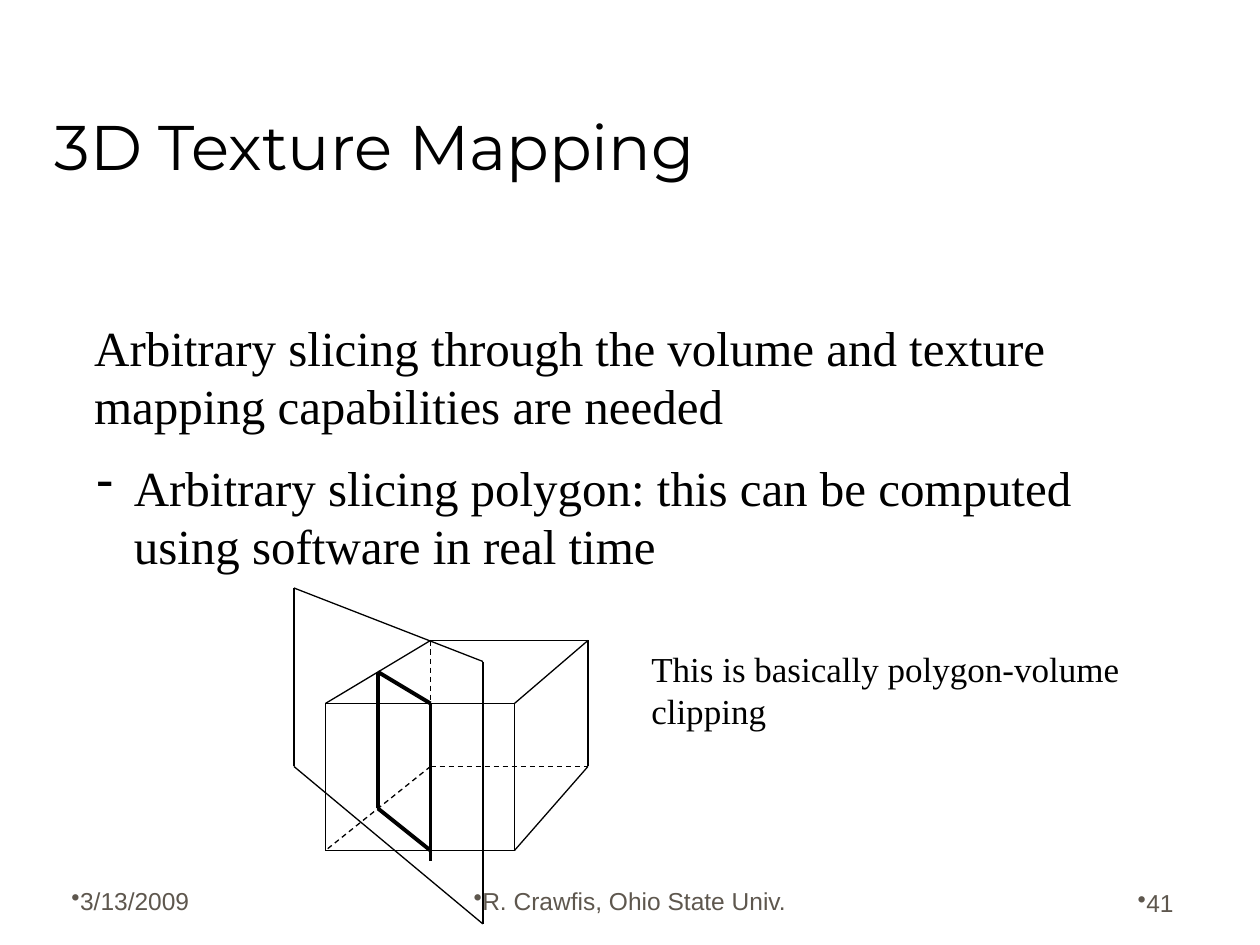
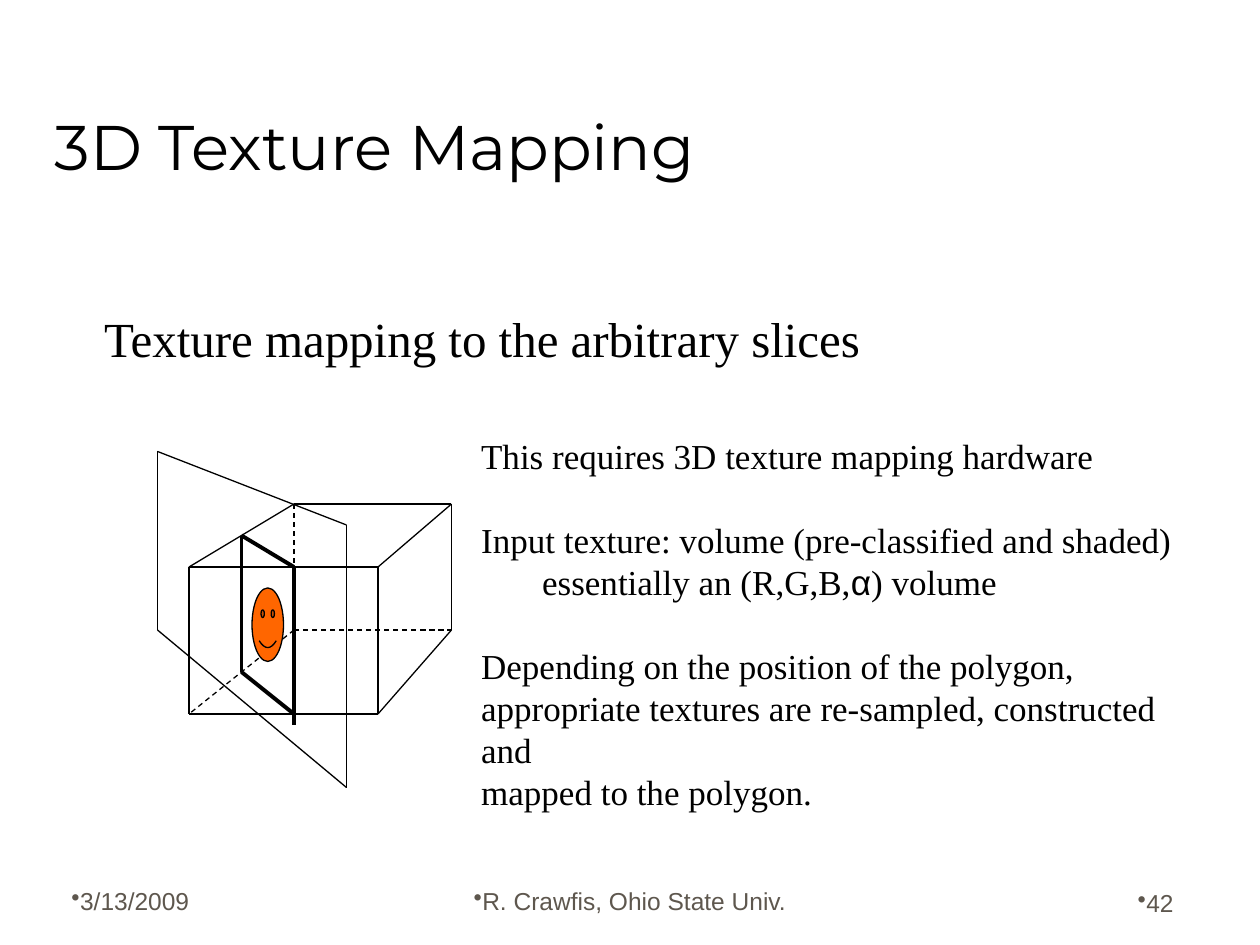
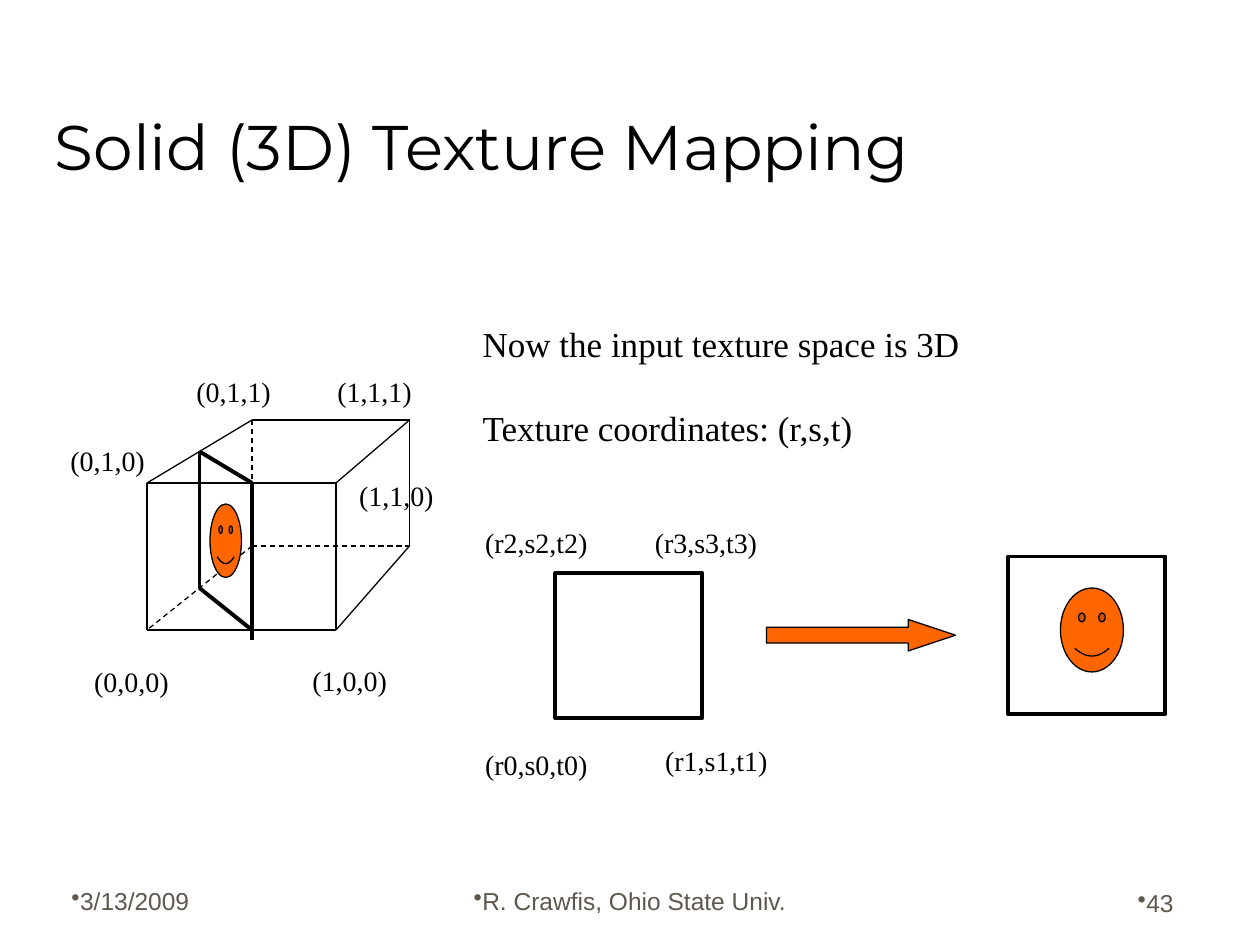
from lxml.etree import SubElement as Sub
from pptx import Presentation
from pptx.dml.color import RGBColor as Rgb
from pptx.enum.dml import MSO_LINE as Dash
from pptx.enum.shapes import MSO_CONNECTOR as Link, MSO_SHAPE as Kind
from pptx.enum.text import MSO_ANCHOR as Anchor, MSO_AUTO_SIZE as Auto, PP_ALIGN as Align
from pptx.oxml.ns import qn
from pptx.util import Cm, Pt

COLORS = {"ink": "000000", "foot": "5E574E", "orange": "FF6600"}
HEAD, BODY, SANS = "Montserrat", "Times New Roman", "Arial"
STEP = 2.54 / 12
THIN, BOLD = 0.75, 2.25

FRONT = [(0, 0), (18, 0), (18, 14), (0, 14), (0, 0)]
SIDES = [(0, 0), (10, -6), (25, -6), (25, 6), (18, 14)]
EDGE = [(18, 0), (25, -6)]
HIDDEN = [[(10, -6), (10, 6), (0, 14)], [(10, 6), (25, 6)]]
PLANE = [(-3, -11), (15, -4), (15, 21), (-3, 6), (-3, -11)]
SLICE = [[(10, 15), (10, 0), (5, -3), (5, 10), (10, 14)]]


def color(name):
    return Rgb.from_string(COLORS[name])


def unit(count):
    return Cm(count * STEP)


def style(para, name, size, tone="ink"):
    font = para.font
    font.name, font.size = name, Pt(size)
    font.color.rgb = color(tone)


def bullet(para, char, hang=0.0):
    props = para._p.get_or_add_pPr()
    props.set("marL", str(Cm(hang)))
    props.set("indent", str(-Cm(hang)))
    Sub(props, qn("a:buChar")).set("char", char)


def title(slide, text):
    shape = slide.shapes.title
    shape.left, shape.top, shape.width, shape.height = Cm(0.85), Cm(0.64), Cm(23.7), Cm(3.18)
    frame = shape.text_frame
    frame.text = text
    frame.auto_size = Auto.NONE
    frame.vertical_anchor = Anchor.BOTTOM
    para = frame.paragraphs[0]
    para.alignment = Align.LEFT
    style(para, HEAD, 36)


def footer(slide, number):
    parts = [
        ("3/13/2009", 1.19, 17.3, 5.29, Align.LEFT),
        ("R. Crawfis, Ohio State Univ.", 8.68, 17.3, 8.04, Align.CENTER),
        (str(number), 18.62, 17.35, 5.29, Align.RIGHT),
    ]
    for text, left, top, width, align in parts:
        frame = slide.shapes.add_textbox(Cm(left), Cm(top), Cm(width), Cm(1.27)).text_frame
        frame.word_wrap = True
        frame.vertical_anchor = Anchor.BOTTOM
        para = frame.paragraphs[0]
        para.text, para.alignment = text, align
        bullet(para, "•")
        style(para, SANS, 14, "foot")


def note(shapes, left, top, width, size, *lines):
    height = Pt(1.2 * size * len(lines)) + Cm(0.25)
    box = shapes.add_textbox(Cm(left), Cm(top), Cm(width), height)
    frame = box.text_frame
    frame.word_wrap = True
    frame.auto_size = Auto.SHAPE_TO_FIT_TEXT
    paras = []
    for i, line in enumerate(lines):
        para = frame.add_paragraph() if i else frame.paragraphs[0]
        para.text = line
        para.line_spacing = Pt(1.2 * size)
        paras.append(para)
    return paras


def body(shapes, left, top, width, size, *lines):
    paras = note(shapes, left, top, width, size, *lines)
    for para in paras:
        style(para, BODY, size)
    return paras


def trace(shapes, base, points, weight=THIN, dash=False):
    spots = [(unit(base[0] + x), unit(base[1] + y)) for x, y in points]
    for start, end in zip(spots, spots[1:]):
        line = shapes.add_connector(Link.STRAIGHT, *start, *end)
        line.line.color.rgb = color("ink")
        line.line.width = Pt(weight)
        if dash:
            line.line.dash_style = Dash.DASH
        Sub(line._element.spPr, qn("a:effectLst"))


def block(shapes, kind, spot, size, fill=None, weight=THIN):
    shape = shapes.add_shape(kind, *map(unit, spot + size))
    shape.shadow.inherit = False
    if fill:
        shape.fill.solid()
        shape.fill.fore_color.rgb = color(fill)
    else:
        shape.fill.background()
    shape.line.color.rgb = color("ink")
    shape.line.width = Pt(weight)
    return shape


def volume(slide, base, plane=True, face=True):
    shapes = slide.shapes.add_group_shape().shapes
    for points in (FRONT, SIDES, EDGE):
        trace(shapes, base, points)
    for points in HIDDEN:
        trace(shapes, base, points, dash=True)
    if plane:
        trace(shapes, base, PLANE)
    for points in SLICE:
        trace(shapes, base, points, BOLD)
    if face:
        block(shapes, Kind.SMILEY_FACE, (base[0] + 6, base[1] + 2), (3, 7), "orange")


def slicing(slide):
    body(slide.shapes, 1.65, 6.27, 21.51, 28,
         "Arbitrary slicing through the volume and texture",
         "mapping capabilities are needed")
    item, rest = note(slide.shapes, 1.7, 9.09, 20.5, 28,
                      "Arbitrary slicing polygon: this can be computed",
                      "using software in real time")
    bullet(item, "-", 0.75)
    rest._p.get_or_add_pPr().set("marL", str(Cm(0.75)))
    for para in (item, rest):
        style(para, BODY, 28)
    volume(slide, (31, 67), face=False)
    body(slide.shapes, 12.88, 12.93, 10.49, 20,
         "This is basically polygon-volume", "clipping")


def mapping(slide):
    body(slide.shapes, 1.85, 6.1, 17.45, 28, "Texture mapping to the arbitrary slices")
    volume(slide, (18, 54))
    paras = body(slide.shapes, 9.45, 8.64, 15.27, 20,
                 "This requires 3D texture mapping hardware",
                 "Input texture: volume (pre-classified and shaded)",
                 "essentially an (R,G,B,",
                 "Depending on the position of the polygon,",
                 "appropriate textures are re-sampled, constructed and",
                 "mapped to the polygon.")
    for i in (1, 3):
        paras[i].space_before = Pt(24)
    paras[2]._p.get_or_add_pPr().set("marL", str(Cm(1.23)))
    alpha = paras[2].add_run()
    alpha.text, alpha.font.name = "α", SANS
    paras[2].add_run().text = ") volume"


def solid(slide):
    volume(slide, (14, 46), plane=False)
    paras = body(slide.shapes, 9.48, 6.38, 10.29, 20,
                 "Now the input texture space is 3D", "Texture coordinates: (r,s,t)")
    paras[1].space_before = Pt(24)
    corners = [
        ("(0,0,0)", 1.65, 13.28), ("(1,0,0)", 6.05, 13.26), ("(0,1,0)", 1.17, 8.81),
        ("(1,1,0)", 6.99, 9.53), ("(0,1,1)", 3.71, 7.42), ("(1,1,1)", 6.55, 7.42),
    ]
    for text, left, top in corners:
        body(slide.shapes, left, top, 2.21, 16, text)
    shapes = slide.shapes.add_group_shape().shapes
    block(shapes, Kind.RECTANGLE, (52.9, 54.6), (14, 13.8), weight=BOLD)
    coords = [
        ("(r0,s0,t0)", 9.53, 14.94), ("(r1,s1,t1)", 13.16, 14.86),
        ("(r2,s2,t2)", 9.53, 10.46), ("(r3,s3,t3)", 12.95, 10.46),
    ]
    for text, left, top in coords:
        body(shapes, left, top, 2.84, 16, text)
    arrow = block(shapes, Kind.RIGHT_ARROW, (73, 59), (18, 3), "orange")
    arrow.adjustments[0], arrow.adjustments[1] = 0.5, 1.5
    block(shapes, Kind.RECTANGLE, (96, 53), (15, 15), weight=BOLD)
    block(shapes, Kind.SMILEY_FACE, (101, 56), (6, 8), "orange")


def main():
    deck = Presentation()
    deck.slide_width, deck.slide_height = Cm(25.4), Cm(19.05)
    pages = [
        ("3D Texture Mapping", slicing),
        ("3D Texture Mapping", mapping),
        ("Solid (3D) Texture Mapping", solid),
    ]
    for number, (text, fill) in enumerate(pages, 41):
        slide = deck.slides.add_slide(deck.slide_layouts[5])
        footer(slide, number)
        title(slide, text)
        fill(slide)
    deck.save("out.pptx")


if __name__ == "__main__":
    main()
